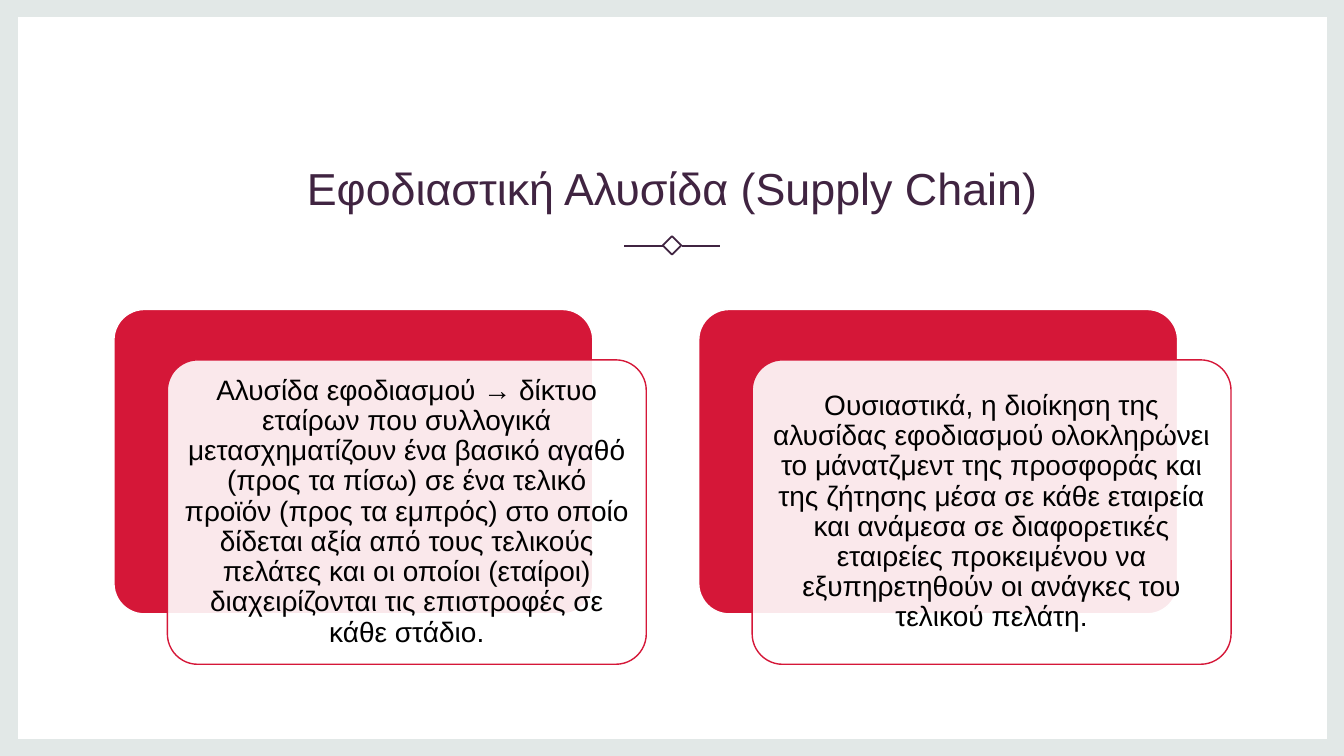
import dataclasses

import lxml.etree
import pptx
import pptx.dml.color
import pptx.enum.shapes
import pptx.enum.text
import pptx.oxml
import pptx.oxml.ns
import pptx.presentation
import pptx.shapes.autoshape
import pptx.slide
import pptx.text.text
import pptx.util

Inches = pptx.util.Inches
Pt = pptx.util.Pt
MSO_SHAPE = pptx.enum.shapes.MSO_SHAPE
ANCHOR = pptx.enum.text.MSO_ANCHOR


@dataclasses.dataclass(frozen=True)
class Theme:
    font: str = "Arial"
    frame: str = "E2E8E7"
    paper: str = "FFFFFF"
    accent: str = "D51738"
    heading: str = "402441"
    ink: str = "000000"
    title_size: int = 32
    card_size: int = 20
    card_line: float = 1
    ornament_line: float = 1.25


@dataclasses.dataclass(frozen=True)
class Box:
    left: float
    top: float
    width: float
    height: float

    def shifted(self, right: float, down: float) -> "Box":
        return dataclasses.replace(self, left=self.left + right, top=self.top + down)

    def lengths(self) -> tuple[int, int, int, int]:
        return Inches(self.left), Inches(self.top), Inches(self.width), Inches(self.height)


@dataclasses.dataclass(frozen=True)
class Card:
    left: float
    statement: str


THEME = Theme()
PAGE = Box(0, 0, 13.33, 7.5)
PANEL = Box(0.18, 0.17, 12.98, 7.16)
HEADING = Box(1.13, 1.05, 11.08, 1.13)
DIAMOND = Box(6.6, 2.37, 0.13, 0.13)
ORNAMENT_Y = 2.44
ORNAMENT_SPANS = ((6.19, 6.58), (6.76, 7.14))
CARD_TOP, CARD_WIDTH, CARD_HEIGHT = 3.07, 4.75, 3.02
CARD_SHIFT = (0.53, 0.5)
CARDS = (
    Card(
        1.13,
        "Αλυσίδα εφοδιασμού → δίκτυο εταίρων που συλλογικά μετασχηματίζουν ένα βασικό "
        "αγαθό (προς τα πίσω) σε ένα τελικό προϊόν (προς τα εμπρός) στο οποίο δίδεται "
        "αξία από τους τελικούς πελάτες και οι οποίοι (εταίροι) διαχειρίζονται τις "
        "επιστροφές σε κάθε στάδιο.",
    ),
    Card(
        6.93,
        "Ουσιαστικά, η διοίκηση της αλυσίδας εφοδιασμού ολοκληρώνει το μάνατζμεντ της "
        "προσφοράς και της ζήτησης μέσα σε κάθε εταιρεία και ανάμεσα σε διαφορετικές "
        "εταιρείες προκειμένου να εξυπηρετηθούν οι ανάγκες του τελικού πελάτη.",
    ),
)


def rgb(value: str) -> pptx.dml.color.RGBColor:
    return pptx.dml.color.RGBColor.from_string(value)


def write(
    frame: pptx.text.text.TextFrame,
    text: str,
    *,
    size: int,
    color: str,
    anchor: ANCHOR,
    spacing: float,
    inset: float | None = None,
) -> None:
    frame.word_wrap = True
    frame.auto_size = pptx.enum.text.MSO_AUTO_SIZE.NONE
    frame.vertical_anchor = anchor
    if inset is not None:
        frame.margin_left = frame.margin_right = Inches(inset)
        frame.margin_top = frame.margin_bottom = Inches(inset)
    paragraph = frame.paragraphs[0]
    paragraph.alignment = pptx.enum.text.PP_ALIGN.CENTER
    paragraph.line_spacing = spacing
    run = paragraph.add_run()
    run.text = text
    run.font.name = THEME.font
    run.font.size = Pt(size)
    run.font.color.rgb = rgb(color)


def add_box(
    slide: pptx.slide.Slide,
    kind: MSO_SHAPE,
    box: Box,
    *,
    fill: str | None = None,
    opacity: int = 100,
    line: str | None = None,
    line_width: float = THEME.card_line,
) -> pptx.shapes.autoshape.Shape:
    shape = slide.shapes.add_shape(kind, *box.lengths())
    shape.shadow.inherit = False
    if fill:
        shape.fill.solid()
        shape.fill.fore_color.rgb = rgb(fill)
        if opacity < 100:
            color = shape.fill._xPr.find(".//" + pptx.oxml.ns.qn("a:srgbClr"))
            alpha = lxml.etree.SubElement(color, pptx.oxml.ns.qn("a:alpha"))
            alpha.set("val", str(opacity * 1000))
    else:
        shape.fill.background()
    if line:
        shape.line.color.rgb = rgb(line)
        shape.line.width = Pt(line_width)
    else:
        shape.line.fill.background()
    return shape


def add_title(slide: pptx.slide.Slide, text: str) -> None:
    title = slide.shapes.title
    title.left, title.top, title.width, title.height = HEADING.lengths()
    write(title.text_frame, text, size=THEME.title_size, color=THEME.heading,
          anchor=ANCHOR.BOTTOM, spacing=1.1)
    title.element.getparent().append(title.element)


def add_ornament(slide: pptx.slide.Slide) -> None:
    diamond = add_box(slide, MSO_SHAPE.RECTANGLE, DIAMOND,
                      line=THEME.heading, line_width=THEME.ornament_line)
    diamond.rotation = 45
    for start, end in ORNAMENT_SPANS:
        rule = slide.shapes.add_connector(
            pptx.enum.shapes.MSO_CONNECTOR.STRAIGHT,
            Inches(start), Inches(ORNAMENT_Y), Inches(end), Inches(ORNAMENT_Y),
        )
        rule.line.color.rgb = rgb(THEME.heading)
        rule.line.width = Pt(THEME.ornament_line)
        lxml.etree.SubElement(rule.element.spPr, pptx.oxml.ns.qn("a:effectLst"))


def add_card(slide: pptx.slide.Slide, card: Card) -> None:
    back = Box(card.left, CARD_TOP, CARD_WIDTH, CARD_HEIGHT)
    backing = add_box(slide, MSO_SHAPE.ROUNDED_RECTANGLE, back,
                      fill=THEME.accent, line=THEME.paper)
    front = add_box(slide, MSO_SHAPE.ROUNDED_RECTANGLE, back.shifted(*CARD_SHIFT),
                    fill=THEME.paper, opacity=90, line=THEME.accent)
    for layer in (backing, front):
        layer.adjustments[0] = 0.1
    write(front.text_frame, card.statement, size=THEME.card_size, color=THEME.ink,
          anchor=ANCHOR.MIDDLE, spacing=0.9, inset=0.08)


def main() -> None:
    presentation = pptx.Presentation()
    presentation.slide_width = Inches(PAGE.width)
    presentation.slide_height = Inches(PAGE.height)
    slide = presentation.slides.add_slide(presentation.slide_layouts.get_by_name("Title Only"))
    add_box(slide, MSO_SHAPE.RECTANGLE, PAGE, fill=THEME.frame)
    add_box(slide, MSO_SHAPE.RECTANGLE, PANEL, fill=THEME.paper)
    add_title(slide, "Εφοδιαστική Αλυσίδα (Supply Chain)")
    add_ornament(slide)
    for card in CARDS:
        add_card(slide, card)
    presentation.save("out.pptx")


if __name__ == "__main__":
    main()
